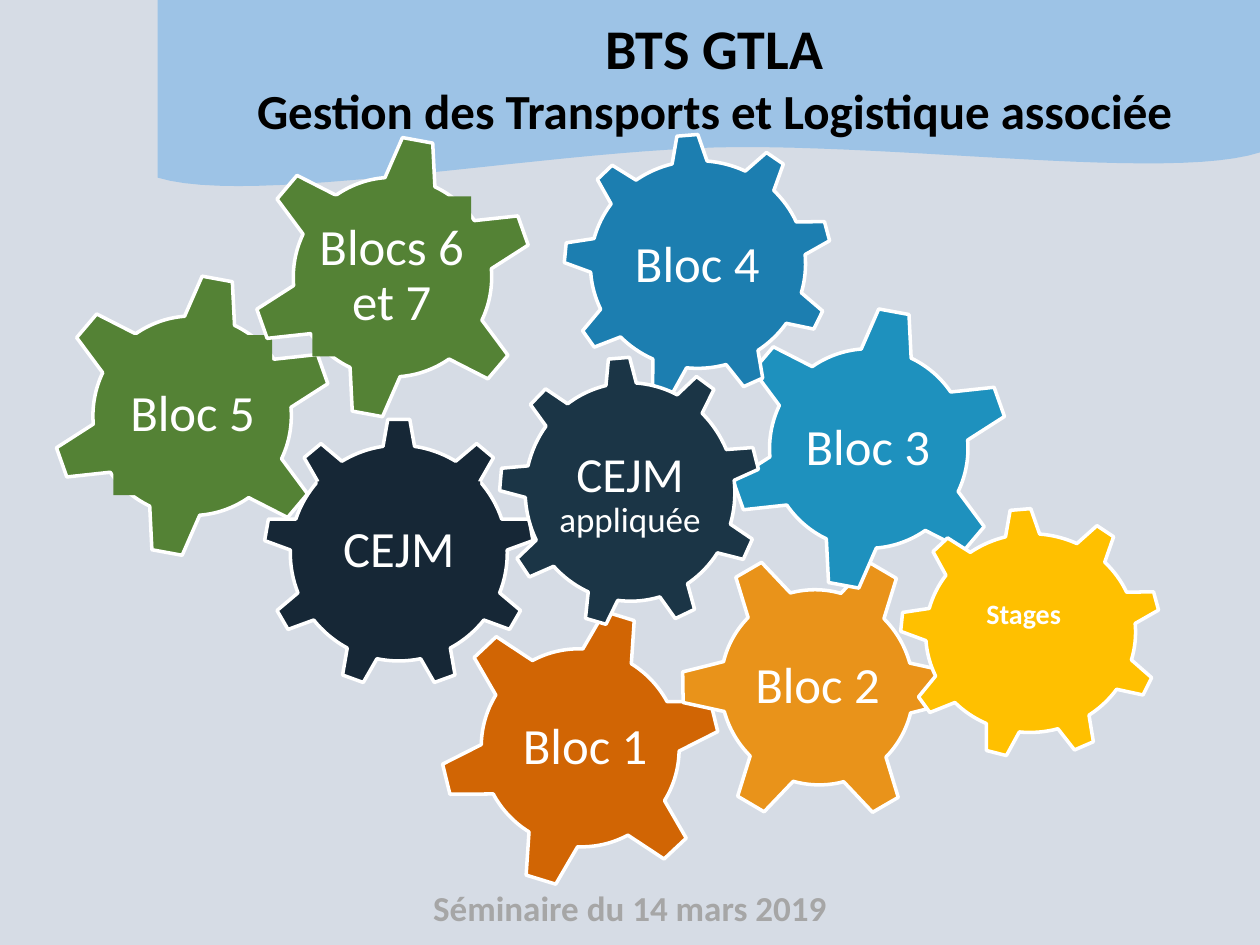
from pptx import Presentation
from pptx.dml.color import RGBColor
from pptx.enum.shapes import MSO_SHAPE
from pptx.enum.text import MSO_ANCHOR, MSO_AUTO_SIZE, PP_ALIGN
from pptx.util import Emu, Pt

SCALE = 9144  # EMU per px, 100 px to the inch
FONT = "Calibri"
LABEL_MARGIN = 4

BACKGROUND = RGBColor(0xD6, 0xDC, 0xE5)
SKY = RGBColor(0x9D, 0xC3, 0xE6)
BLACK = RGBColor(0x00, 0x00, 0x00)
WHITE = RGBColor(0xFF, 0xFF, 0xFF)
GREY = RGBColor(0xA6, 0xA6, 0xA6)
RUST = RGBColor(0xD1, 0x65, 0x04)
ORANGE = RGBColor(0xE9, 0x93, 0x1A)
GOLD = RGBColor(0xFF, 0xC0, 0x00)
NIGHT = RGBColor(0x16, 0x27, 0x36)
NAVY = RGBColor(0x1B, 0x35, 0x46)
BLUE = RGBColor(0x1C, 0x7E, 0xB0)
CYAN = RGBColor(0x1E, 0x91, 0xBE)
GREEN = RGBColor(0x54, 0x82, 0x35)

SIX, NINE = MSO_SHAPE.GEAR_6, MSO_SHAPE.GEAR_9
SLIM_TEETH = (0.104, 0.027)

# Label boxes are relative to their gear; runs are (text, size).
GEARS = [
    dict(box=(349, 481, 223, 225), kind=SIX, color=RUST, rotation=316.7,
         label_box=(53, 50, 125, 126), runs=[("Bloc 1", 29)]),
    dict(box=(209, 332, 215, 214), kind=NINE, color=NIGHT,
         label_box=(43, 50, 129, 110), runs=[("CEJM", 29)], filled=True),
    dict(box=(540, 435, 217, 221), kind=SIX, color=ORANGE, rotation=329.8,
         label_box=(48, 48, 122, 124), runs=[("Bloc 2", 29)]),
    dict(box=(577, 243, 225, 226), kind=SIX, color=CYAN, rotation=10.4,
         label_box=(49, 50, 126, 127), runs=[("Bloc 3", 29)]),
    dict(box=(447, 106, 214, 208), kind=NINE, color=BLUE, rotation=355.3, teeth=SLIM_TEETH,
         label_box=(30, 57, 153, 97), runs=[("Bloc 4", 29)]),
    dict(box=(714, 403, 208, 199), kind=NINE, color=GOLD, rotation=355.3, teeth=SLIM_TEETH,
         label_box=(7, 44, 183, 116), runs=[("Stages", 16)], bold=True, raise_by=33),
    dict(box=(396, 283, 208, 215), kind=NINE, color=NAVY, rotation=355.3,
         label_box=(30, 60, 148, 100), runs=[("CEJM ", 28), ("appliquée", 20)]),
    dict(box=(40, 217, 225, 226), kind=SIX, color=GREEN, rotation=10.4,
         label_box=(50, 49, 126, 127), runs=[("Bloc 5", 29)], filled=True),
    dict(box=(199, 107, 225, 226), kind=SIX, color=GREEN, rotation=10.4,
         label_box=(49, 49, 126, 127), runs=[("Blocs 6 et 7", 29)], filled=True),
]


def px(value):
    return Emu(round(value * SCALE))


def set_all(target, values):
    for name, value in values.items():
        setattr(target, name, value)


def write(paragraph, runs, color, bold=False):
    paragraph.alignment = PP_ALIGN.CENTER
    for text, size in runs:
        run = paragraph.add_run()
        run.text = text
        set_all(run.font, dict(name=FONT, size=Pt(size), bold=bold))
        run.font.color.rgb = color


def add_heading(shapes, box, lines, color):
    """Bold centred text, one paragraph for each (text, size) line."""
    frame = shapes.add_textbox(*map(px, box)).text_frame
    set_all(frame, dict(word_wrap=True, auto_size=MSO_AUTO_SIZE.SHAPE_TO_FIT_TEXT))
    for index, line in enumerate(lines):
        paragraph = frame.add_paragraph() if index else frame.paragraphs[0]
        write(paragraph, [line], color, bold=True)


def bezier(points, steps=24):
    """Points along a cubic curve, without its start."""
    for step in range(1, steps + 1):
        t = step / steps
        weights = ((1 - t) ** 3, 3 * t * (1 - t) ** 2, 3 * t ** 2 * (1 - t), t ** 3)
        yield tuple(sum(w * p[axis] for w, p in zip(weights, points)) for axis in (0, 1))


def add_wave(shapes, box):
    left, top, width, height = box
    right_edge, middle, left_edge = (width, 121), (445, 117), (0, 141)
    outline = [(width, 0), right_edge,
               *bezier([right_edge, (804, 144), (591, 114), middle]),
               *bezier([middle, (299, 121), (74, 164), left_edge])]
    builder = shapes.build_freeform(px(left), px(top), scale=1.0)
    builder.add_line_segments([(px(left + x), px(top + y)) for x, y in outline], close=True)
    wave = builder.convert_to_shape()
    wave.shadow.inherit = False
    wave.fill.solid()
    wave.fill.fore_color.rgb = SKY
    wave.line.fill.background()


def add_gear(shapes, box, kind, color, label_box, runs,
             rotation=0, teeth=(), bold=False, filled=False, raise_by=0):
    """Gear with its upright label, on a filled rectangle if asked."""
    group = shapes.add_group_shape().shapes
    gear = group.add_shape(kind, *map(px, box))
    gear.shadow.inherit = False
    gear.rotation = rotation
    for index, value in enumerate(teeth):
        gear.adjustments[index] = value
    gear.fill.solid()
    gear.fill.fore_color.rgb = color
    gear.line.color.rgb = WHITE
    gear.line.width = Pt(2)

    left, top, width, height = label_box
    place = [px(value) for value in (box[0] + left, box[1] + top, width, height)]
    if filled:
        label = group.add_shape(MSO_SHAPE.RECTANGLE, *place)
        label.shadow.inherit = False
        label.fill.solid()
        label.fill.fore_color.rgb = color
        label.line.fill.background()
    else:
        label = group.add_textbox(*place)
    frame = label.text_frame
    margin = px(LABEL_MARGIN)
    set_all(frame, dict(word_wrap=True, vertical_anchor=MSO_ANCHOR.MIDDLE,
                        margin_left=margin, margin_right=margin, margin_top=margin,
                        margin_bottom=px(LABEL_MARGIN + raise_by)))
    paragraph = frame.paragraphs[0]
    paragraph.line_spacing = 0.9
    write(paragraph, runs, WHITE, bold)


def main():
    presentation = Presentation()
    set_all(presentation, dict(slide_width=px(1000), slide_height=px(750)))
    slide = presentation.slides.add_slide(presentation.slide_layouts[6])
    slide.background.fill.solid()
    slide.background.fill.fore_color.rgb = BACKGROUND
    shapes = slide.shapes

    add_heading(shapes, (250, 699, 500, 44), [("Séminaire du 14 mars 2019", 20)], GREY)
    add_wave(shapes, (125, 0, 875, 164))
    add_heading(shapes, (188, 6, 758, 111),
                [("BTS GTLA", 32), ("Gestion des Transports et Logistique associée", 28)], BLACK)
    for gear in GEARS:
        add_gear(shapes, **gear)
    presentation.save("out.pptx")


if __name__ == "__main__":
    main()
